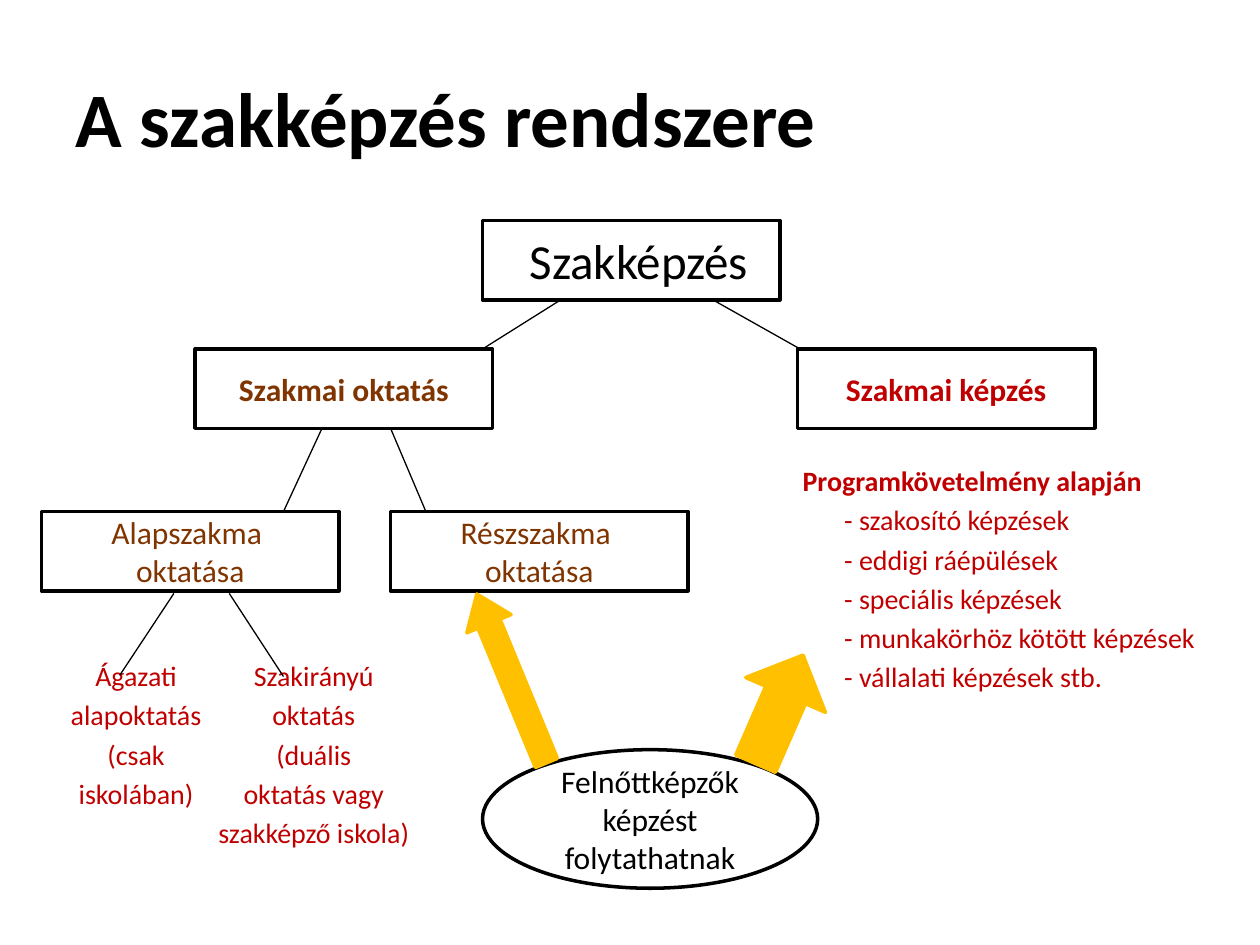
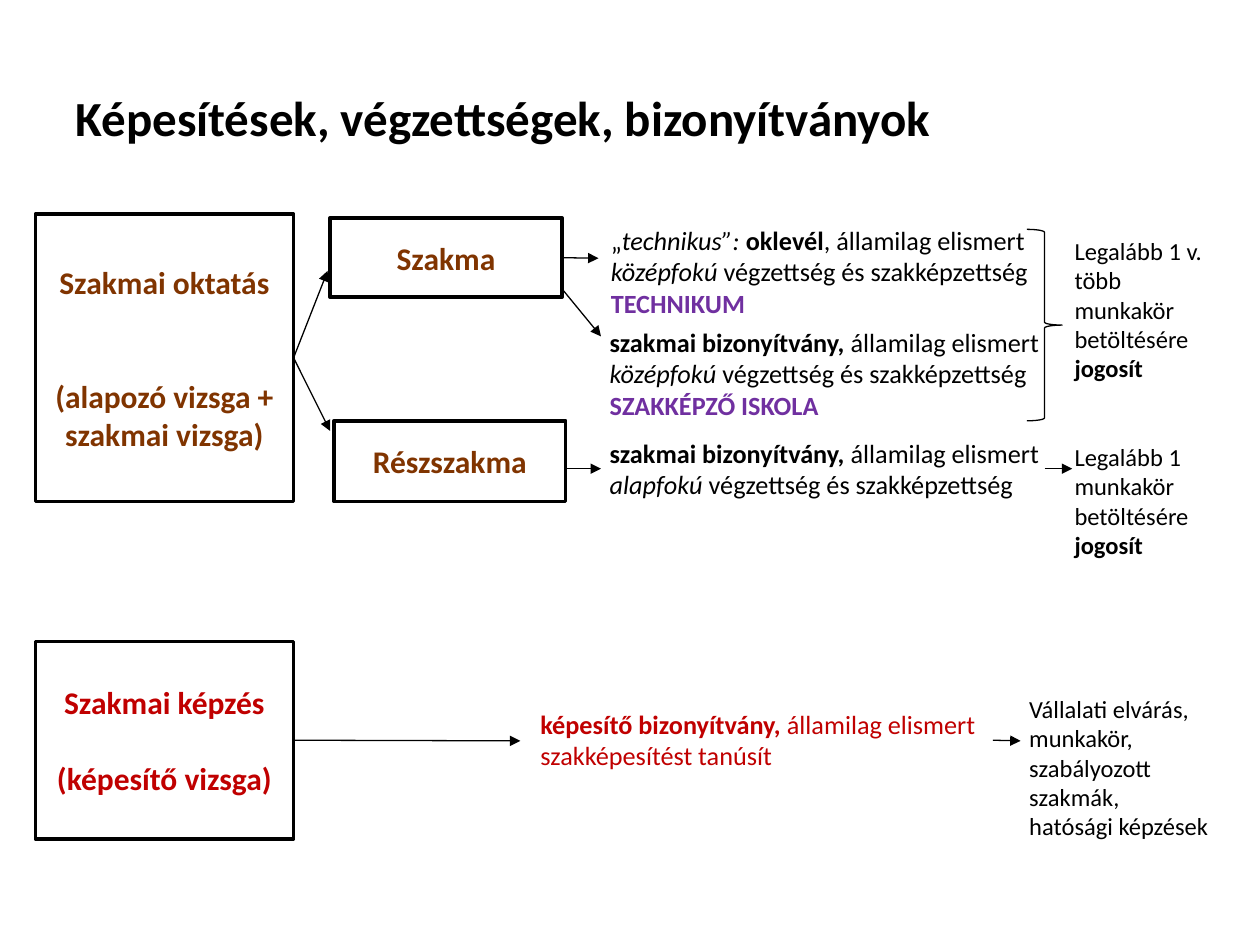
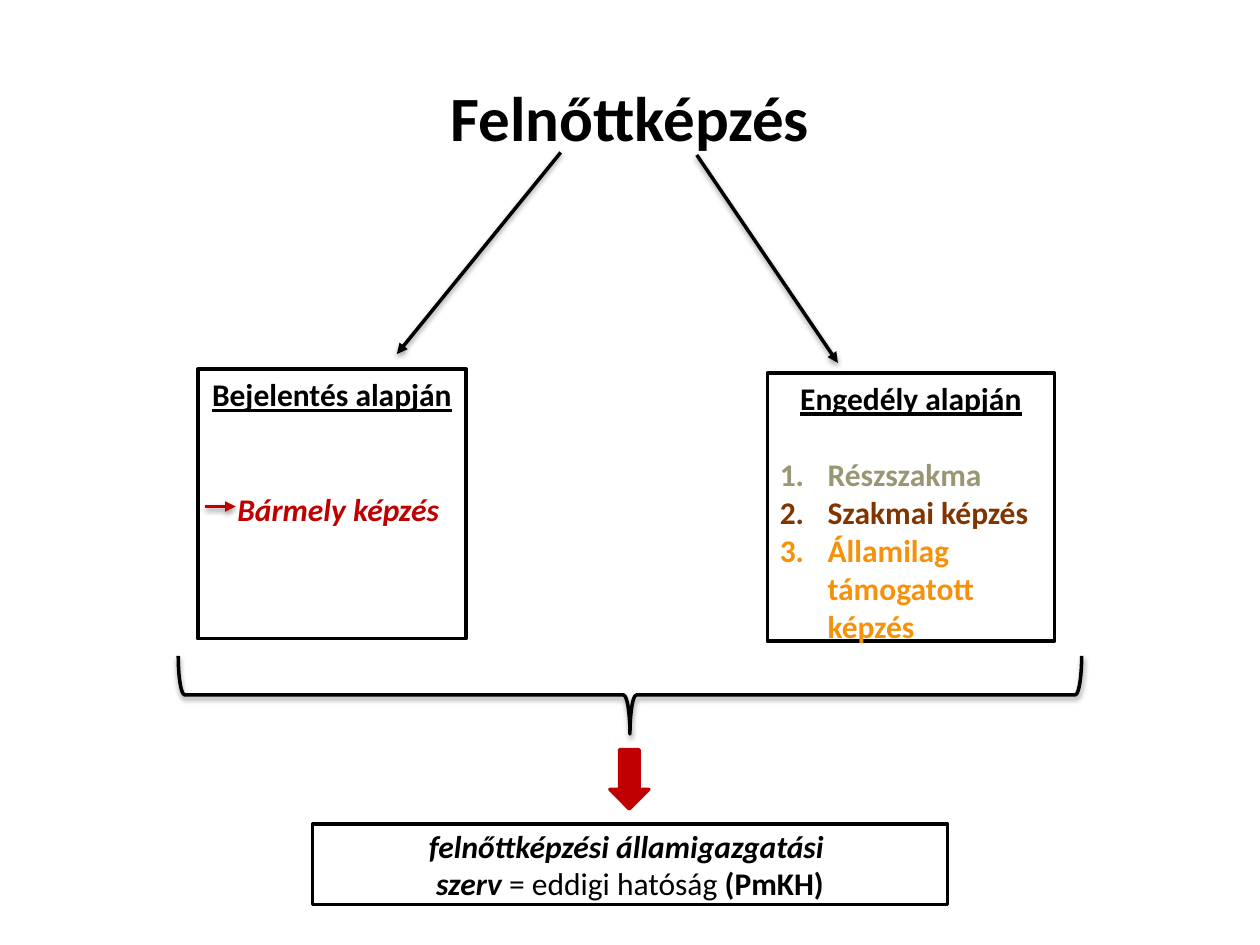
from dataclasses import dataclass
from typing import Optional

from lxml import etree
from pptx import Presentation
from pptx.dml.color import RGBColor
from pptx.enum.shapes import MSO_CONNECTOR, MSO_SHAPE
from pptx.enum.text import MSO_ANCHOR, MSO_AUTO_SIZE, PP_ALIGN
from pptx.oxml.ns import qn
from pptx.util import Inches, Pt

FONT = "Calibri"
BLACK = RGBColor(0x00, 0x00, 0x00)
WHITE = RGBColor(0xFF, 0xFF, 0xFF)
BROWN = RGBColor(0x80, 0x34, 0x00)
RED = RGBColor(0xC0, 0x00, 0x00)
AMBER = RGBColor(0xFF, 0xC0, 0x00)
PURPLE = RGBColor(0x70, 0x30, 0xA0)
KHAKI = RGBColor(0x99, 0x97, 0x73)
ORANGE = RGBColor(0xF6, 0x91, 0x0A)

LEFT, CENTER = PP_ALIGN.LEFT, PP_ALIGN.CENTER
TOP, MIDDLE = MSO_ANCHOR.TOP, MSO_ANCHOR.MIDDLE
RECTANGLE, ELLIPSE = MSO_SHAPE.RECTANGLE, MSO_SHAPE.OVAL
DOWN_ARROW = MSO_SHAPE.DOWN_ARROW
LEFT_BRACE, RIGHT_BRACE = MSO_SHAPE.LEFT_BRACE, MSO_SHAPE.RIGHT_BRACE
STRAIGHT = MSO_CONNECTOR.STRAIGHT
NO_AUTOFIT = MSO_AUTO_SIZE.NONE

TITLE_AND_BODY, TITLE_ONLY = 1, 5
RIGHT_SIDE = 3
THIN, THICK = 0.75, 2
LIST_GAP = 3.2
TEXT_LINE = 22


@dataclass
class Span:
    text: str
    bold: Optional[bool] = None
    italic: bool = False
    underline: bool = False
    color: Optional[RGBColor] = None


def write_text(frame, lines, size, color=BLACK, bold=False, align=LEFT, anchor=TOP):
    frame.word_wrap = True
    frame.auto_size = NO_AUTOFIT
    frame.vertical_anchor = anchor
    for index, line in enumerate(lines):
        para = frame.paragraphs[0] if index == 0 else frame.add_paragraph()
        para.alignment = align
        for span in [Span(line)] if isinstance(line, str) else line:
            run = para.add_run()
            run.text = span.text
            font = run.font
            font.name = FONT
            font.size = Pt(size)
            font.bold = bold if span.bold is None else span.bold
            font.italic = span.italic
            font.underline = span.underline
            font.color.rgb = span.color or color


def indent(para, left, hanging=0, numbered=False):
    properties = para._p.get_or_add_pPr()
    properties.set("marL", str(Inches(left)))
    properties.set("indent", str(-Inches(hanging)))
    if numbered:
        etree.SubElement(properties, qn("a:buAutoNum"), type="arabicPeriod")
    else:
        etree.SubElement(properties, qn("a:buNone"))


def add_page(deck, layout, title, size, align=LEFT):
    page = deck.slides.add_slide(deck.slide_layouts[layout])
    write_text(page.shapes.title.text_frame, [title], size, bold=True, align=align, anchor=MIDDLE)
    return page


def set_line(shape, color, width):
    shape.line.color.rgb = color
    shape.line.width = Pt(width)


def cast_shadow(effects):
    shadow = etree.SubElement(effects, qn("a:outerShdw"), blurRad="40000", dist="20000",
                              dir="5400000", rotWithShape="0")
    tint = etree.SubElement(shadow, qn("a:srgbClr"), val=str(BLACK))
    etree.SubElement(tint, qn("a:alpha"), val="38000")


def add_box(page, at, lines, size=18, color=BLACK, bold=False, align=CENTER,
            anchor=MIDDLE, outlined=True, outline=RECTANGLE):
    box = page.shapes.add_shape(outline, *map(Inches, at))
    box.shadow.inherit = False
    box.fill.solid()
    box.fill.fore_color.rgb = WHITE
    if outlined:
        set_line(box, BLACK, THICK)
    else:
        box.line.fill.background()
    write_text(box.text_frame, lines, size, color, bold, align, anchor)
    return box


def add_text(page, at, lines, size, color=BLACK, align=LEFT):
    box = page.shapes.add_textbox(*map(Inches, at))
    write_text(box.text_frame, lines, size, color, align=align)
    return box


def add_line(page, start, end, color=BLACK, width=THIN, arrow=False, shadow=False, source=None):
    line = page.shapes.add_connector(STRAIGHT, *map(Inches, start + end))
    if source is not None:
        line.begin_connect(source, RIGHT_SIDE)
    set_line(line, color, width)
    if arrow:
        etree.SubElement(line.line._get_or_add_ln(), qn("a:tailEnd"), type="triangle")
    effects = etree.SubElement(line._element.spPr, qn("a:effectLst"))
    if shadow:
        cast_shadow(effects)


def add_block_arrow(page, at, color, rotation=0, head=0.5):
    arrow = page.shapes.add_shape(DOWN_ARROW, *map(Inches, at))
    arrow.shadow.inherit = False
    arrow.rotation = rotation
    arrow.adjustments[1] = head
    arrow.fill.solid()
    arrow.fill.fore_color.rgb = color
    set_line(arrow, color, THICK)


def add_brace(page, outline, at, width, rotation=0, shadow=False):
    brace = page.shapes.add_shape(outline, *map(Inches, at))
    brace.shadow.inherit = False
    brace.rotation = rotation
    brace.fill.background()
    set_line(brace, BLACK, width)
    if shadow:
        cast_shadow(brace._element.spPr.find(qn("a:effectLst")))


def add_system_page(deck):
    page = add_page(deck, TITLE_AND_BODY, "A szakképzés rendszere", 44)

    programmes = page.placeholders[1]
    programmes.left, programmes.top, programmes.width, programmes.height = map(
        Inches, (6.27, 3.63, 3.5, 2.1))
    write_text(programmes.text_frame, [
        [Span("Programkövetelmény alapján", bold=True)],
        "- szakosító képzések",
        "- eddigi ráépülések",
        "- speciális képzések",
        "- munkakörhöz kötött képzések",
        "- vállalati képzések stb.",
    ], 16, RED)
    for index, para in enumerate(programmes.text_frame.paragraphs):
        indent(para, 0.33 if index else 0)

    size = (2.36, 0.63)
    root = add_box(page, (3.83, 1.75) + size, ["Szakképzés"], 28)
    indent(root.text_frame.paragraphs[0], 0.12)
    add_box(page, (1.55, 2.77) + size, ["Szakmai oktatás"], color=BROWN, bold=True)
    add_box(page, (6.33, 2.77) + size, ["Szakmai képzés"], color=RED, bold=True)
    add_box(page, (0.33, 4.06) + size, ["Alapszakma ", "oktatása"], color=BROWN)
    add_box(page, (3.1, 4.06) + size, ["Részszakma ", "oktatása"], color=BROWN)

    for left, width, lines in (
        (0.33, 1.5, ["Ágazati", "alapoktatás", "(csak", "iskolában)"]),
        (1.54, 1.9, ["Szakirányú", "oktatás", "(duális", "oktatás vagy", "szakképző iskola)"]),
    ):
        column = add_text(page, (left, 5.18, width, 1.7), lines, 16, RED, CENTER)
        for para in column.text_frame.paragraphs:
            para.space_before = Pt(LIST_GAP)

    for start, end in (
        ((4.45, 2.38), (3.83, 2.77)),
        ((5.64, 2.37), (6.35, 2.77)),
        ((2.56, 3.39), (2.25, 4.06)),
        ((3.1, 3.4), (3.38, 4.06)),
        ((1.38, 4.71), (0.95, 5.36)),
        ((1.82, 4.71), (2.25, 5.37)),
    ):
        add_line(page, start, end)

    add_box(page, (3.83, 5.95, 2.66, 1.1), ["Felnőttképzők képzést folytathatnak"], outline=ELLIPSE)
    add_block_arrow(page, (5.84, 5.16, 0.69, 0.94), AMBER, 203.6)
    add_block_arrow(page, (3.87, 4.66, 0.38, 1.45), AMBER, 157.6, 0.67)


def add_certificates_page(deck):
    page = add_page(deck, TITLE_ONLY, "Képesítések, végzettségek, bizonyítványok", 28)

    education = add_box(page, (0.28, 1.7, 2.05, 2.28),
                        ["Szakmai oktatás", "(alapozó vizsga + szakmai vizsga)"],
                        color=BROWN, bold=True)
    education.text_frame.paragraphs[1].space_before = Pt(2 * TEXT_LINE)
    trade = add_box(page, (2.62, 1.73, 1.84, 0.63), ["Szakma"], color=BROWN, bold=True)
    add_box(page, (2.65, 3.34, 1.84, 0.64), ["Részszakma"], color=BROWN, bold=True)
    training = add_box(page, (0.28, 5.09, 2.05, 1.57), ["Szakmai képzés", "(képesítő vizsga)"],
                       color=RED, bold=True)
    training.text_frame.paragraphs[1].space_before = Pt(TEXT_LINE)

    certificate = Span("szakmai bizonyítvány,", bold=True)
    recognised = Span(" államilag elismert ")
    secondary = Span("középfokú ", italic=True)
    qualification = Span("végzettség és szakképzettség")
    add_text(page, (4.75, 1.73, 3.57, 0.86), [
        [Span("„"), Span("technikus”: ", italic=True), Span("oklevél", bold=True),
         Span(", államilag elismert "), secondary, qualification],
        [Span("TECHNIKUM", bold=True, color=PURPLE)],
    ], 15)
    add_text(page, (4.74, 2.54, 3.69, 0.86), [
        [certificate, recognised, secondary, qualification],
        [Span("SZAKKÉPZŐ ISKOLA", bold=True, color=PURPLE)],
    ], 15)
    add_text(page, (4.74, 3.42, 3.69, 0.61), [
        [certificate, recognised, Span("alapfokú ", italic=True), qualification],
    ], 15)
    proof = add_text(page, (4.19, 5.57, 3.69, 0.61), [
        [Span("képesítő bizonyítvány,", bold=True),
         Span(" államilag elismert szakképesítést tanúsít")],
    ], 15, RED)

    entitles = Span("jogosít", bold=True)
    for at, lines in (
        ((8.43, 1.76, 1.24, 1.39),
         [[Span("Legalább 1 v. több munkakör betöltésére "), entitles]]),
        ((8.43, 3.28, 1.24, 1.39),
         [[Span("Legalább 1 munkakör betöltésére "), entitles]]),
        ((8.07, 5.28, 1.73, 1.62),
         ["Vállalati elvárás, munkakör,", "szabályozott szakmák,", "hatósági képzések"]),
    ):
        add_box(page, at, lines, 14, align=LEFT, outlined=False)

    add_brace(page, RIGHT_BRACE, (8.15, 1.82, 0.28, 1.52), THIN)
    for start, end, source in (
        ((2.33, 2.84), (2.6, 2.15), education),
        ((2.33, 2.84), (2.62, 3.42), education),
        ((2.33, 5.88), (4.13, 5.88), training),
        ((7.88, 5.88), (8.1, 5.88), proof),
        ((4.46, 2.05), (4.75, 2.05), trade),
        ((4.45, 2.28), (4.77, 2.67), None),
        ((4.48, 3.72), (4.77, 3.72), None),
        ((8.29, 3.72), (8.51, 3.72), None),
    ):
        add_line(page, start, end, arrow=True, source=source)


def add_adult_training_page(deck):
    page = add_page(deck, TITLE_ONLY, "Felnőttképzés", 36, CENTER)

    for start, end in (((4.45, 1.21), (3.15, 2.81)), ((5.53, 1.23), (6.65, 2.88))):
        add_line(page, start, end, width=THICK, arrow=True, shadow=True)

    notified = add_box(page, (1.57, 2.93, 2.13, 2.14), [
        [Span("Bejelentés alapján", underline=True)],
        [Span("Bármely képzés", italic=True, color=RED)],
    ], bold=True, anchor=TOP)
    any_training = notified.text_frame.paragraphs[1]
    any_training.space_before = Pt(2 * TEXT_LINE)
    indent(any_training, 0.1)
    add_line(page, (1.63, 4.02), (1.87, 4.02), RED, THICK, arrow=True, shadow=True)

    licensed = add_box(page, (6.09, 2.96, 2.28, 2.13), [
        [Span("Engedély alapján", underline=True)],
        [Span("Részszakma", color=KHAKI)],
        [Span("Szakmai képzés", color=BROWN)],
        [Span("Államilag támogatott képzés", color=ORANGE)],
    ], bold=True, anchor=TOP)
    items = licensed.text_frame.paragraphs[1:]
    items[0].space_before = Pt(TEXT_LINE)
    for para in items:
        para.alignment = LEFT
        indent(para, 0.38, 0.38, numbered=True)

    add_brace(page, LEFT_BRACE, (4.69, 1.93, 0.62, 7.17), THICK, 270, shadow=True)
    add_block_arrow(page, (4.84, 5.95, 0.31, 0.47), RED)
    add_box(page, (2.48, 6.54, 5.04, 0.64), [
        [Span("felnőttképzési államigazgatási ", bold=True, italic=True)],
        [Span("szerv ", bold=True, italic=True), Span("= eddigi hatóság "),
         Span("(PmKH)", bold=True)],
    ])


def main():
    deck = Presentation()
    deck.slide_width, deck.slide_height = Inches(10), Inches(7.5)
    add_system_page(deck)
    add_certificates_page(deck)
    add_adult_training_page(deck)
    deck.save("out.pptx")


if __name__ == "__main__":
    main()
